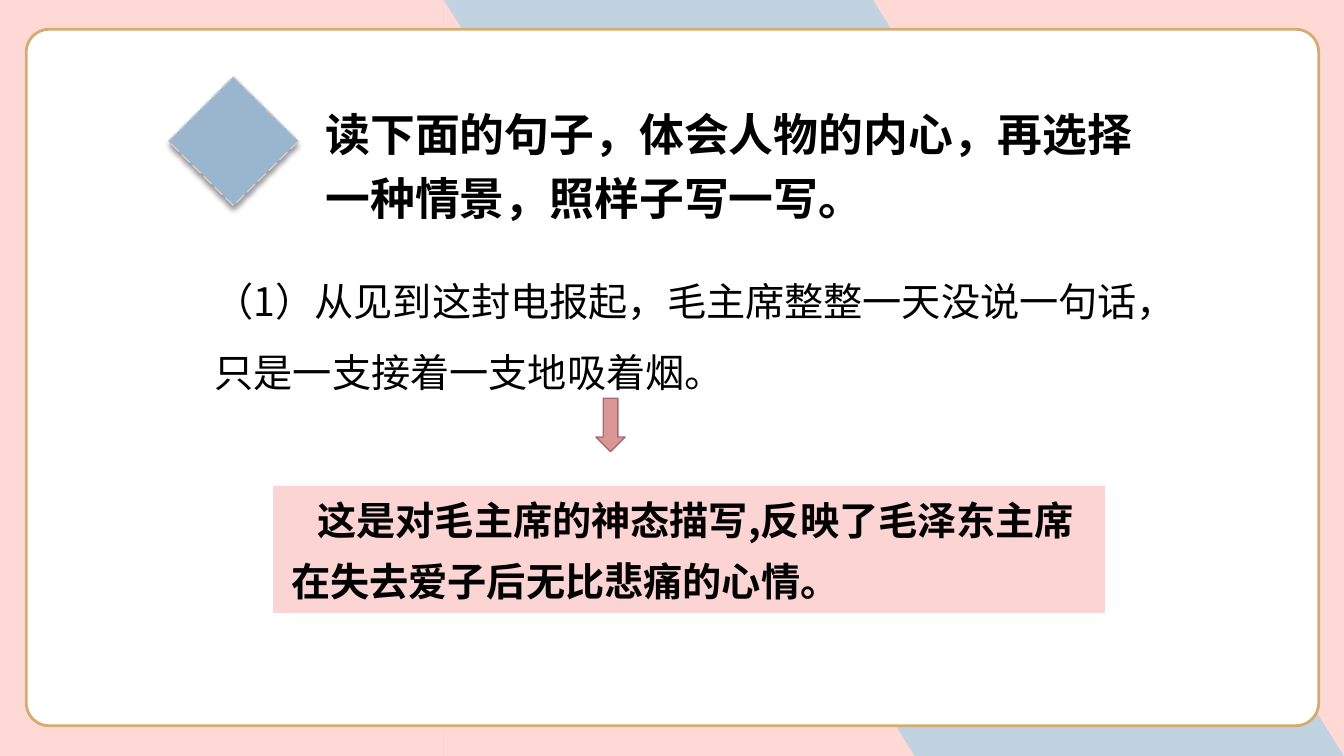
from dataclasses import dataclass
from typing import Optional

from lxml.etree import SubElement
from pptx import Presentation
from pptx.dml.color import RGBColor as RGB
from pptx.enum.dml import MSO_LINE_DASH_STYLE as DASH
from pptx.enum.shapes import MSO_SHAPE as SHAPE
from pptx.enum.text import MSO_AUTO_SIZE as AUTO
from pptx.oxml.ns import qn
from pptx.util import Inches, Pt


@dataclass(frozen=True)
class Theme:
    font: str = "Noto Sans CJK SC"
    title_size: int = 32
    body_size: int = 28
    ink: str = "000000"
    sky: str = "C1D2E1"
    blush: str = "FFD9D5"
    card: str = "FFFFFF"
    gold: str = "D4AC6F"
    blue: str = "9AB5CE"
    dash_grey: str = "D0CECE"
    arrow: str = "DC9595"
    arrow_edge: str = "A36E6E"
    panel: str = "FBD4D3"


@dataclass(frozen=True)
class Box:
    """Left, top, width and height in percent of the slide."""
    x: float
    y: float
    w: float
    h: float

    def emu(self) -> tuple[int, int, int, int]:
        return (int(WIDTH * self.x / 100), int(HEIGHT * self.y / 100),
                int(WIDTH * self.w / 100), int(HEIGHT * self.h / 100))


@dataclass(frozen=True)
class Figure:
    kind: SHAPE
    box: Box
    fill: str
    line: Optional[str] = None
    line_pt: float = 1
    rotation: int = 0
    corner: Optional[float] = None
    dashed: bool = False
    shadow: bool = False


@dataclass(frozen=True)
class Passage:
    text: str
    box: Box
    size: int
    spacing: float
    bold: bool = False
    inset_y: float = 0.05
    indent: float = 0


WIDTH, HEIGHT = Inches(13.33), Inches(7.5)
T = Theme()

# Background bands, card and bullet diamond, arrow and answer panel
FIGURES = [
    Figure(SHAPE.RIGHT_TRIANGLE, Box(64.97, 0, 35.03, 100), T.blush, rotation=180),
    Figure(SHAPE.RIGHT_TRIANGLE, Box(33.01, 0, 35.03, 100), T.blush),
    Figure(SHAPE.RECTANGLE, Box(0, 0, 33.01, 100), T.blush),
    Figure(SHAPE.ROUNDED_RECTANGLE, Box(1.95, 3.87, 96.17, 92.13), T.card,
           T.gold, 2, corner=0.033),
    Figure(SHAPE.DIAMOND, Box(12.53, 10.13, 9.68, 17.07), T.blue,
           T.dash_grey, dashed=True, shadow=True),
    Figure(SHAPE.DOWN_ARROW, Box(44.34, 52.67, 2.18, 7.07), T.arrow, T.arrow_edge),
    Figure(SHAPE.RECTANGLE, Box(20.33, 64.27, 61.89, 16.8), T.panel),
]

# Task, quotation and answer
PASSAGES = [
    Passage("读下面的句子，体会人物的内心，再选择一种情景，照样子写一写。",
            Box(23.48, 12.67, 62.79, 17.2), T.title_size, 1.2, bold=True, inset_y=0),
    Passage("（1）从见到这封电报起，毛主席整整一天没说一句话，只是一支接着一支地吸着烟。",
            Box(15.23, 32.93, 71.04, 20.13), T.body_size, 1.5),
    Passage("这是对毛主席的神态描写,反映了毛泽东主席在失去爱子后无比悲痛的心情。",
            Box(20.93, 63.07, 60.39, 17.6), T.body_size, 1.3, bold=True, indent=0.26),
]


def add_shadow(sp) -> None:
    effects = sp._element.spPr.find(qn("a:effectLst"))
    outer = SubElement(effects, qn("a:outerShdw"), blurRad=str(Pt(4)),
                       dist=str(Pt(3)), dir="5400000", algn="t", rotWithShape="0")
    color = SubElement(outer, qn("a:srgbClr"), val=T.ink)
    SubElement(color, qn("a:alpha"), val="40000")


def draw_figure(slide, fig: Figure) -> None:
    sp = slide.shapes.add_shape(fig.kind, *fig.box.emu())
    sp.rotation = fig.rotation
    sp.shadow.inherit = False
    sp.fill.solid()
    sp.fill.fore_color.rgb = RGB.from_string(fig.fill)
    if fig.corner is not None:
        sp.adjustments[0] = fig.corner
    if fig.line:
        sp.line.color.rgb = RGB.from_string(fig.line)
        sp.line.width = Pt(fig.line_pt)
    else:
        sp.line.fill.background()
    if fig.dashed:
        sp.line.dash_style = DASH.LONG_DASH
    if fig.shadow:
        add_shadow(sp)


def draw_passage(slide, item: Passage) -> None:
    tf = slide.shapes.add_textbox(*item.box.emu()).text_frame
    tf.word_wrap = True
    tf.auto_size = AUTO.SHAPE_TO_FIT_TEXT
    tf.margin_left = tf.margin_right = Inches(0.1)
    tf.margin_top = tf.margin_bottom = Inches(item.inset_y)
    tf.text = item.text
    p = tf.paragraphs[0]
    p.line_spacing = item.spacing
    if item.indent:
        p._p.get_or_add_pPr().set("indent", str(Inches(item.indent)))
    r = p.runs[0]
    r.font.name = T.font
    r.font.size = Pt(item.size)
    r.font.bold = item.bold
    r.font.color.rgb = RGB.from_string(T.ink)
    SubElement(r._r.get_or_add_rPr(), qn("a:ea"), typeface=T.font)


def main() -> None:
    prs = Presentation()
    prs.slide_width, prs.slide_height = WIDTH, HEIGHT
    slide = prs.slides.add_slide(prs.slide_layouts[6])
    slide.background.fill.solid()
    slide.background.fill.fore_color.rgb = RGB.from_string(T.sky)
    for fig in FIGURES:
        draw_figure(slide, fig)
    for item in PASSAGES:
        draw_passage(slide, item)
    prs.save("out.pptx")


if __name__ == "__main__":
    main()
